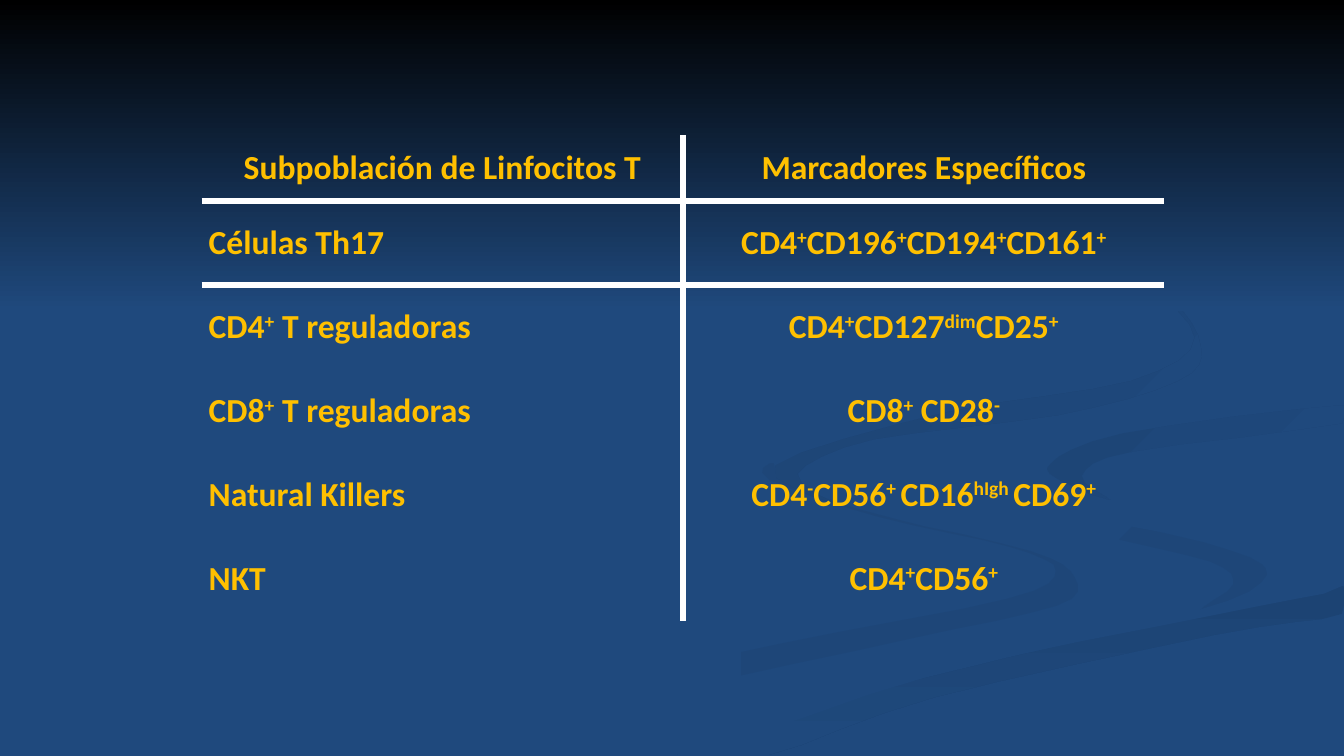
from pptx import Presentation
from pptx.dml.color import RGBColor as RGB
from pptx.enum.shapes import MSO_SHAPE as Preset
from pptx.enum.text import MSO_ANCHOR as Anchor, PP_ALIGN as Align
from pptx.oxml.ns import qn
from pptx.util import Inches, Pt
from lxml.etree import SubElement

COLORS = {
    "blue": "1F497D",
    "black": "000000",
    "white": "FFFFFF",
    "gold": "FFC000",
    "shade_low": "1E4678",
    "shade_wide": "1C4373",
    "shade_right": "1D4576",
    "shade_top": "1D4474",
}
NO_STYLE = "{2D5ABB26-0587-4C30-8999-92F81FD0307C}"
HUNDREDTH = 9144
LIMITS = (1333, 749)
STEPS = 4

deck = Presentation()
deck.slide_width, deck.slide_height = Inches(13.33), Inches(7.5)
unit = deck.slide_height / 90
slide = deck.slides.add_slide(deck.slide_layouts[6])
slide.background.fill.solid()
slide.background.fill.fore_color.rgb = RGB.from_string(COLORS["blue"])


def paint(shape, start, end, angle):
    shape.shadow.inherit = False
    shape.line.fill.background()
    if start == end:
        shape.fill.solid()
        shape.fill.fore_color.rgb = RGB.from_string(COLORS[start])
        return
    shape.fill.gradient()
    shape.fill.gradient_angle = -angle % 360
    for stop, color, position in zip(shape.fill.gradient_stops, (start, end), (0, 1)):
        stop.color.rgb = RGB.from_string(COLORS[color])
        stop.position = position


def draw_border(cell, side):
    line = SubElement(cell._tc.get_or_add_tcPr(), qn(f"a:ln{side}"), w=str(Pt(4.5)))
    fill = SubElement(line, qn("a:solidFill"))
    SubElement(fill, qn("a:srgbClr"), val=COLORS["white"])


ribbons = [
    ("blue", "shade_low", 0, [
        (767, 459), (763, 476), (872, 513), (1003, 543), (1047, 566), (999, 594),
        (772, 639), (556, 690), (400, 749), (482, 749), (665, 687), (901, 634),
        (1048, 601), (1066, 573), (1023, 547), (881, 513), (783, 481)]),
    ("blue", "shade_low", 45, [
        (965, 464), (985, 494), (1087, 530), (1200, 557), (1223, 580), (1191, 605),
        (1254, 581), (1240, 553), (1134, 524), (1010, 498)]),
    ("shade_wide", "blue", 90, [
        (671, 749), (762, 749), (926, 692), (1204, 630), (1331, 609), (1331, 581),
        (1062, 638), (840, 693)]),
    ("blue", "blue", 0, [
        (966, 464), (1033, 503), (1206, 540), (1257, 570), (1189, 605), (991, 643),
        (764, 703), (636, 749), (693, 747), (928, 669), (1205, 610), (1332, 581),
        (1332, 538), (1131, 503), (1042, 463), (1154, 424), (1332, 402), (1332, 387),
        (1077, 417)]),
    ("shade_right", "blue", 45, [
        (1042, 460), (1054, 478), (1101, 496), (1073, 472), (1124, 448), (1331, 420),
        (1331, 402), (1113, 430)]),
    ("shade_top", "blue", 45, [
        (769, 462), (829, 500), (791, 470), (866, 436), (1049, 412), (1168, 378),
        (1191, 344), (1152, 291), (1017, 233), (1127, 279), (1185, 335), (1122, 378),
        (939, 409)]),
]
for start, end, angle, bends in ribbons:
    outline = []
    for index, here in enumerate(bends):
        before = bends[index - 1]
        after, beyond = (bends[(index + ahead) % len(bends)] for ahead in (1, 2))
        for step in range(STEPS):
            t = step / STEPS
            outline.append([
                min(limit, b + t * (c - a + t * (2 * a - 5 * b + 4 * c - d
                                                + t * (3 * b - a - 3 * c + d))) / 2)
                for a, b, c, d, limit in zip(before, here, after, beyond, LIMITS)])
    builder = slide.shapes.build_freeform(*outline[0], scale=HUNDREDTH)
    builder.add_line_segments(outline[1:], close=True)
    paint(builder.convert_to_shape(), start, end, angle)

night_band = slide.shapes.add_shape(Preset.RECTANGLE, 0, 0, deck.slide_width, int(37 * unit))
paint(night_band, "black", "blue", 90)

markers = [
    ("Subpoblación de Linfocitos T", "Marcadores Específicos"),
    ("Células Th17", "CD4^+^CD196^+^CD194^+^CD161^+"),
    ("CD4^+^ T reguladoras", "CD4^+^CD127^dim^CD25^+"),
    ("CD8^+^ T reguladoras", "CD8^+^ CD28^-"),
    ("Natural Killers", "CD4^-^CD56^+ ^CD16^hIgh ^CD69^+"),
    ("NKT", "CD4^+^CD56^+"),
]
left, top, width, height = (int(n * unit) for n in (24, 16.1, 114.6, 57.8))
grid = slide.shapes.add_table(len(markers), 2, left, top, width, height).table
grid.first_row = grid.horz_banding = False
grid._tbl.tblPr.find(qn("a:tableStyleId")).text = NO_STYLE
for row_index, subset in enumerate(markers):
    grid.rows[row_index].height = int((10 if row_index else 7.8) * unit)
    for col_index, marked_text in enumerate(subset):
        cell = grid.cell(row_index, col_index)
        cell.margin_left = cell.margin_right = Inches(0.07)
        cell.margin_top = cell.margin_bottom = 0
        cell.vertical_anchor = Anchor.MIDDLE
        draw_border(cell, "L" if col_index else "R")
        if row_index < 2:
            draw_border(cell, "T" if row_index else "B")
        cell.fill.background()
        paragraph = cell.text_frame.paragraphs[0]
        paragraph.alignment = Align.CENTER if col_index or not row_index else Align.LEFT
        for part_index, part in enumerate(marked_text.split("^")):
            if not part:
                continue
            run = paragraph.add_run()
            run.text = part
            run.font.name, run.font.size, run.font.bold = "Calibri", Pt(24), True
            run.font.color.rgb = RGB.from_string(COLORS["gold"])
            if part_index % 2:
                run.font._element.set("baseline", "30000")

deck.save("out.pptx")
